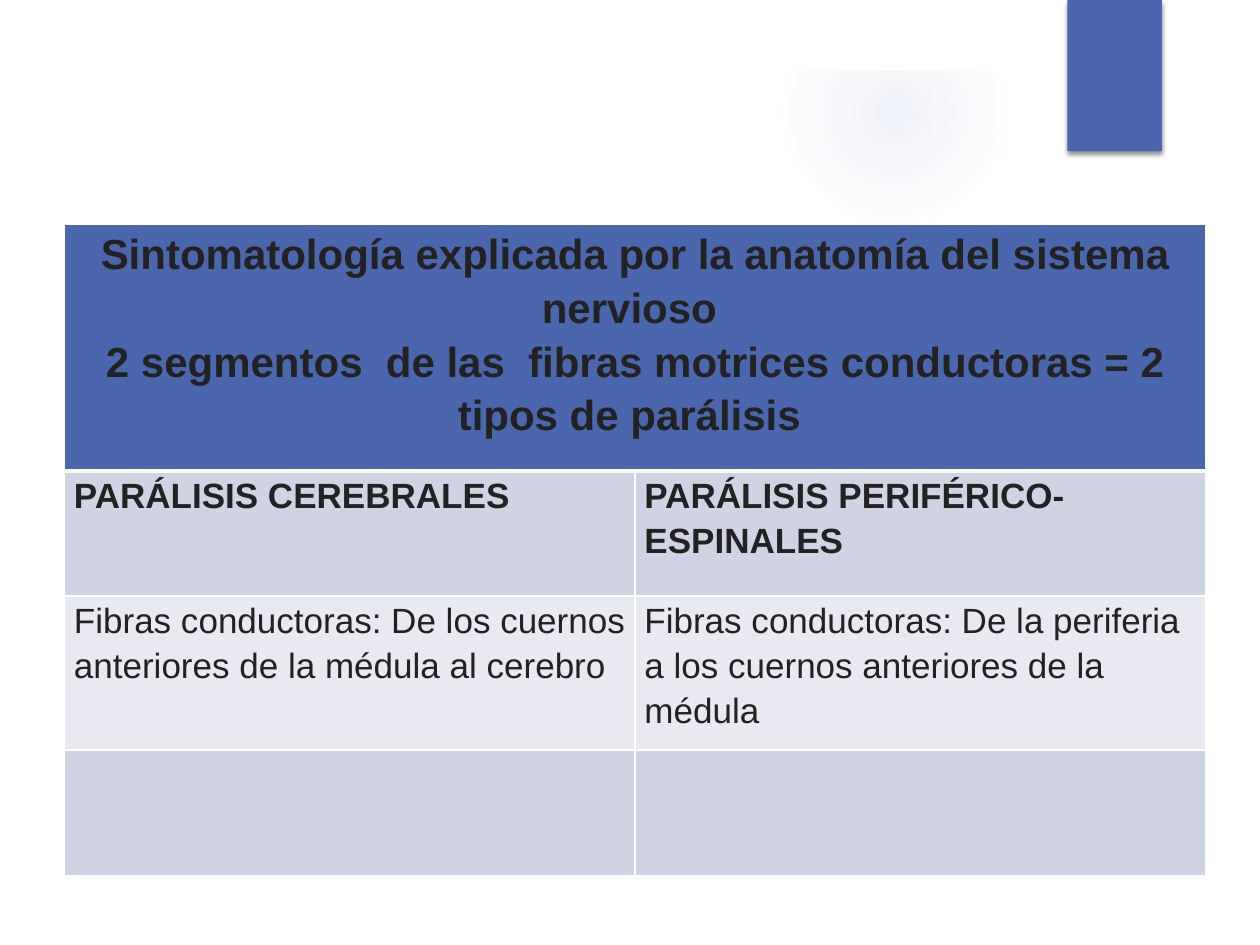
from dataclasses import dataclass

from lxml import etree
from pptx import Presentation
from pptx.dml.color import RGBColor
from pptx.enum import shapes, text
from pptx.oxml import parse_xml
from pptx.oxml.ns import nsdecls, qn
from pptx.util import Pt

COLORS = {"blue": "4A66AC", "glow": "90A2CF", "ink": "222222", "white": "FFFFFF",
          "band": "D0D3E3", "light": "E9EAF1"}


@dataclass
class Row:
    height: float
    fill: str
    cells: list[str]
    size: float = 20
    bold: bool = False
    align: text.PP_ALIGN = text.PP_ALIGN.LEFT
    bottom: float = 1


ROWS = [
    Row(140.8, "blue",
        ["Sintomatología explicada por la anatomía del sistema nervioso \n"
         "2 segmentos  de las  fibras motrices conductoras = 2 tipos de parálisis "],
        size=24, bold=True, align=text.PP_ALIGN.CENTER, bottom=3),
    Row(71.6, "band", ["PARÁLISIS CEREBRALES", "PARÁLISIS PERIFÉRICO-ESPINALES"], bold=True),
    Row(88, "light",
        ["Fibras conductoras: De los cuernos anteriores de la médula al cerebro",
         "Fibras conductoras: De la periferia a los cuernos anteriores de la médula"]),
    Row(71.6, "band", []),
]


def rgb(name: str) -> RGBColor:
    return RGBColor.from_string(COLORS[name])


def paint(sp, fill: str):
    sp.shadow.inherit = False
    sp.fill.solid()
    sp.fill.fore_color.rgb = rgb(fill)
    sp.line.fill.background()
    return sp


def add_box(s, kind, left: float, top: float, width: float, height: float, fill: str):
    return paint(s.shapes.add_shape(kind, Pt(left), Pt(top), Pt(width), Pt(height)), fill)


def add_frame(s, outer: tuple, inner: tuple, fill: str):
    """Draw the area between two (left, top, right, bottom) rectangles."""
    builder = s.shapes.build_freeform(Pt(outer[0]), Pt(outer[1]))
    for i, (left, top, right, bottom) in enumerate((outer, inner)):
        corners = [(left, bottom), (right, bottom), (right, top)]
        if i:
            builder.move_to(Pt(left), Pt(top))
            corners.reverse()
        builder.add_line_segments([(Pt(x), Pt(y)) for x, y in corners], close=True)
    return paint(builder.convert_to_shape(), fill)


def set_glow(sp, stops: list[tuple[int, int]]) -> None:
    """Fill with a radial gradient of (position %, opacity %) stops."""
    gs = "".join(f'<a:gs pos="{pos * 1000}"><a:srgbClr val="{COLORS["glow"]}">'
                 f'<a:alpha val="{alpha * 1000}"/></a:srgbClr></a:gs>' for pos, alpha in stops)
    grad = parse_xml(f'<a:gradFill {nsdecls("a")} rotWithShape="1"><a:gsLst>{gs}</a:gsLst>'
                     '<a:path path="circle"><a:fillToRect l="50000" t="50000" r="50000" '
                     'b="50000"/></a:path></a:gradFill>')
    pr = sp._element.spPr
    pr.replace(pr.find(qn("a:solidFill")), grad)


def set_shadow(sp) -> None:
    effects = sp._element.spPr.find(qn("a:effectLst"))
    effects.append(parse_xml(
        f'<a:outerShdw {nsdecls("a")} blurRad="{Pt(3)}" dist="{Pt(2)}" dir="5400000" '
        'rotWithShape="0"><a:srgbClr val="000000"><a:alpha val="45000"/></a:srgbClr>'
        '</a:outerShdw>'))


def set_borders(cell, **widths: float) -> None:
    pr = cell._tc.get_or_add_tcPr()
    for i, (side, width) in enumerate(widths.items()):
        ln = etree.Element(qn(f"a:{side}"), w=str(Pt(width)))
        fill = etree.SubElement(ln, qn("a:solidFill"))
        etree.SubElement(fill, qn("a:srgbClr"), val=COLORS["white"])
        pr.insert(i, ln)


def write(tf, content: str, *, size: float, bold: bool, align, color: str = "ink") -> None:
    tf.text = content
    for p in tf.paragraphs:
        p.alignment = align
        p.line_spacing = 1.15
        for r in p.runs:
            r.font.name = "Arial"
            r.font.size = Pt(size)
            r.font.bold = bold
            r.font.color.rgb = rgb(color)


def add_table(s, rows: list[Row], left: float, top: float, width: float, cols: int = 2) -> None:
    height = sum(row.height for row in rows)
    table = s.shapes.add_table(len(rows), cols, Pt(left), Pt(top), Pt(width), Pt(height)).table
    for column in table.columns:
        column.width = Pt(width / cols)
    for i, row in enumerate(rows):
        table.rows[i].height = Pt(row.height)
        above = rows[i - 1].bottom if i else 1
        for cell in table.rows[i].cells:
            cell.fill.solid()
            cell.fill.fore_color.rgb = rgb(row.fill)
            cell.margin_left = cell.margin_right = Pt(5.3)
            cell.margin_top = cell.margin_bottom = 0
            set_borders(cell, lnL=1, lnR=1, lnT=above, lnB=row.bottom)
        for j, content in enumerate(row.cells):
            write(table.cell(i, j).text_frame, content,
                  size=row.size, bold=row.bold, align=row.align)
    # The heading spans every column
    table.cell(0, 0).merge(table.cell(0, cols - 1))


def main() -> None:
    prs = Presentation()
    prs.slide_width, prs.slide_height = Pt(720), Pt(540)
    s = prs.slides.add_slide(prs.slide_layouts[6])

    # Soft glow, cut off by the white frame
    glow = add_box(s, shapes.MSO_SHAPE.OVAL, 448, 1, 126, 126, "glow")
    set_glow(glow, [(0, 14), (36, 7), (73, 0)])
    add_frame(s, (0, 0, 720, 540), (40, 40, 680, 500), "white")

    # Blue tab
    tab = add_box(s, shapes.MSO_SHAPE.RECTANGLE, 610, 0, 54, 86.4, "blue")
    set_shadow(tab)

    # Comparison table
    add_table(s, ROWS, left=37, top=128.3, width=652)

    prs.save("out.pptx")


if __name__ == "__main__":
    main()
